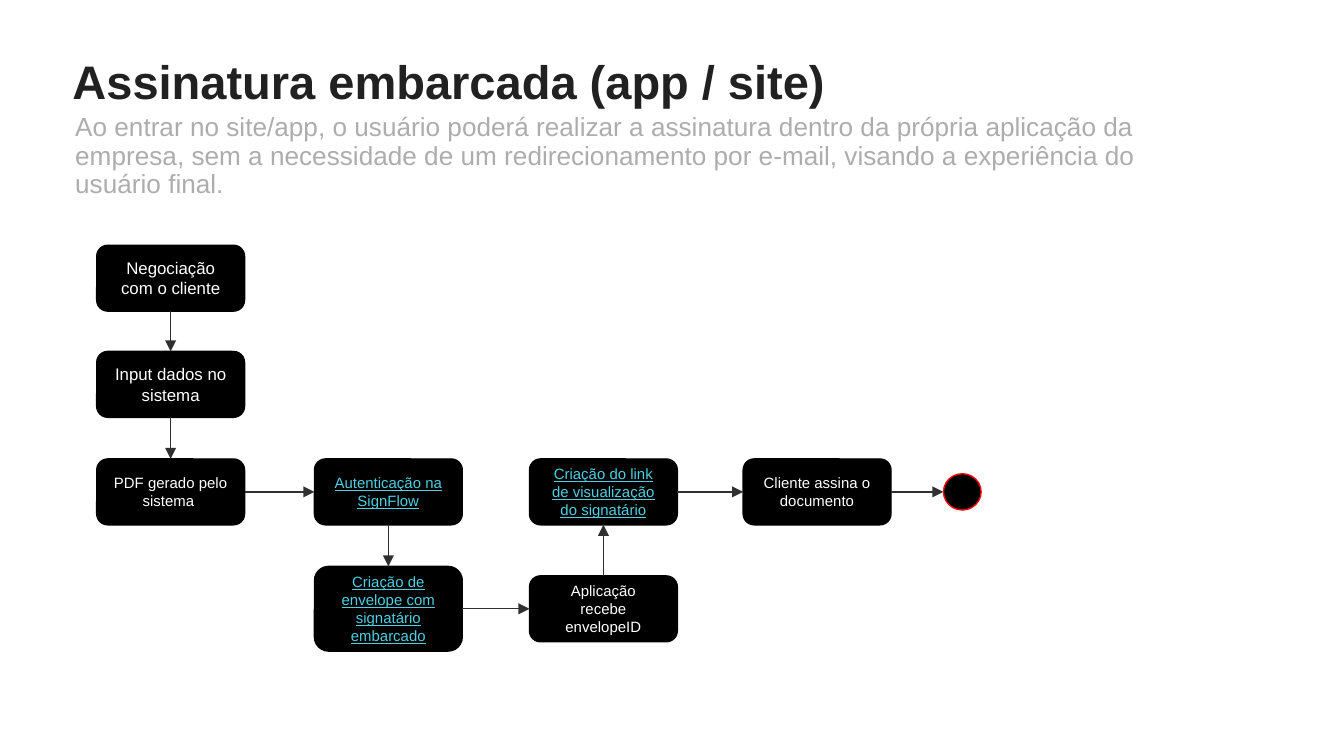
from lxml.etree import SubElement
from pptx import Presentation
from pptx.dml.color import RGBColor
from pptx.enum.shapes import MSO_CONNECTOR, MSO_SHAPE
from pptx.enum.text import MSO_ANCHOR, PP_ALIGN
from pptx.oxml.ns import qn
from pptx.util import Inches, Pt

TITLE = "Assinatura embarcada (app / site)"
SUBTITLE = (
    "Ao entrar no site/app, o usuário poderá realizar a assinatura dentro da "
    "própria aplicação da empresa, sem a necessidade de um redirecionamento "
    "por e-mail, visando a experiência do usuário final."
)

# name: (text, column, row, height, style)
STEPS = {
    "negotiation": ("Negociação com o cliente", 0, 0, 0.49, "step_large"),
    "input": ("Input dados no sistema", 0, 1, 0.49, "step_large"),
    "pdf": ("PDF gerado pelo sistema ", 0, 2, 0.49, "step"),
    "login": ("Autenticação na SignFlow", 1, 2, 0.49, "link"),
    "envelope": ("Criação de envelope com signatário embarcado", 1, 3, 0.63, "link"),
    "envelope_id": ("Aplicação recebe envelopeID", 2, 3, 0.49, "step"),
    "view_link": ("Criação do link de visualização do signatário", 2, 2, 0.49, "link"),
    "signing": ("Cliente assina o documento", 3, 2, 0.49, "step"),
}
# from, to, direction
ARROWS = [
    ("negotiation", "input", "down"),
    ("input", "pdf", "down"),
    ("pdf", "login", "right"),
    ("login", "envelope", "down"),
    ("envelope", "envelope_id", "right"),
    ("envelope_id", "view_link", "up"),
    ("view_link", "signing", "right"),
]

THEME = {
    "font": "Arial",
    "box": "000000",
    "end_line": "FF0000",
    "arrow": "303030",
    "line": 0.75,
    # style: (size, colour, bold, underline)
    "title": (25.2, "212121", True, False),
    "subtitle": (14, "ADADAD", False, False),
    "step_large": (9, "FFFFFF", False, False),
    "step": (8, "FFFFFF", False, False),
    "link": (8, "4DD0E1", False, True),
}

COLUMN_LEFTS = (0.72, 2.34, 3.94, 5.53)
ROW_MIDDLES = (2.07, 2.86, 3.66, 4.53)
STEP_WIDTH = 1.1
END_LEFT, END_WIDTH, END_HEIGHT = 7.02, 0.28, 0.27
SIDES = {"down": (2, 0), "up": (0, 2), "right": (3, 1)}


def color(name):
    return RGBColor.from_string(THEME.get(name, name))


def write(shape, text, style, inset=0.1):
    frame = shape.text_frame
    frame.word_wrap = True
    frame.margin_left = frame.margin_right = Inches(inset)
    frame.margin_top = frame.margin_bottom = Inches(inset)
    paragraph = frame.paragraphs[0]
    span = paragraph.add_run()
    span.text = text
    size, rgb, bold, underline = THEME[style]
    span.font.name = THEME["font"]
    span.font.size = Pt(size)
    span.font.color.rgb = color(rgb)
    span.font.bold = bold
    span.font.underline = underline
    return paragraph


def add_text(page, place, text, style, inset):
    box = page.shapes.add_textbox(*map(Inches, place))
    return write(box, text, style, inset)


def add_node(page, kind, left, middle, width, height, line):
    node = page.shapes.add_shape(
        kind, Inches(left), Inches(middle - height / 2), Inches(width), Inches(height)
    )
    node.shadow.inherit = False
    node.fill.solid()
    node.fill.fore_color.rgb = color("box")
    node.line.color.rgb = color(line)
    node.line.width = Pt(THEME["line"])
    return node


def add_step(page, text, column, row, height, style):
    box = add_node(page, MSO_SHAPE.ROUNDED_RECTANGLE, COLUMN_LEFTS[column],
                   ROW_MIDDLES[row], STEP_WIDTH, height, "box")
    paragraph = write(box, text, style)
    paragraph.alignment = PP_ALIGN.CENTER
    box.text_frame.vertical_anchor = MSO_ANCHOR.MIDDLE
    return box


def add_arrow(page, start, direction, target=None, end=(0, 0)):
    """Join two steps, or run from a step to the free point `end`."""
    arrow = page.shapes.add_connector(MSO_CONNECTOR.STRAIGHT, 0, 0, *map(Inches, end))
    begin_side, end_side = SIDES[direction]
    arrow.begin_connect(start, begin_side)
    if target is not None:
        arrow.end_connect(target, end_side)
    arrow.line.color.rgb = color("arrow")
    arrow.line.width = Pt(THEME["line"])
    SubElement(arrow.line._get_or_add_ln(), qn("a:tailEnd"), type="triangle")
    SubElement(arrow._element.spPr, qn("a:effectLst"))


def main():
    deck = Presentation()
    deck.slide_width = Inches(10)
    deck.slide_height = deck.slide_width * 9 // 16
    page = deck.slides.add_slide(deck.slide_layouts[6])

    add_text(page, (0.44, 0.29, 9.32, 0.63), TITLE, "title", 0.1)
    subtitle = add_text(page, (0.56, 0.85, 8.3, 0.63), SUBTITLE, "subtitle", 0)
    subtitle.line_spacing = 0.9

    boxes = {name: add_step(page, *step) for name, step in STEPS.items()}
    add_node(page, MSO_SHAPE.OVAL, END_LEFT, ROW_MIDDLES[2],
             END_WIDTH, END_HEIGHT, "end_line")

    for start, target, direction in ARROWS:
        add_arrow(page, boxes[start], direction, boxes[target])
    add_arrow(page, boxes["signing"], "right", end=(END_LEFT, ROW_MIDDLES[2]))

    deck.save("out.pptx")


if __name__ == "__main__":
    main()
